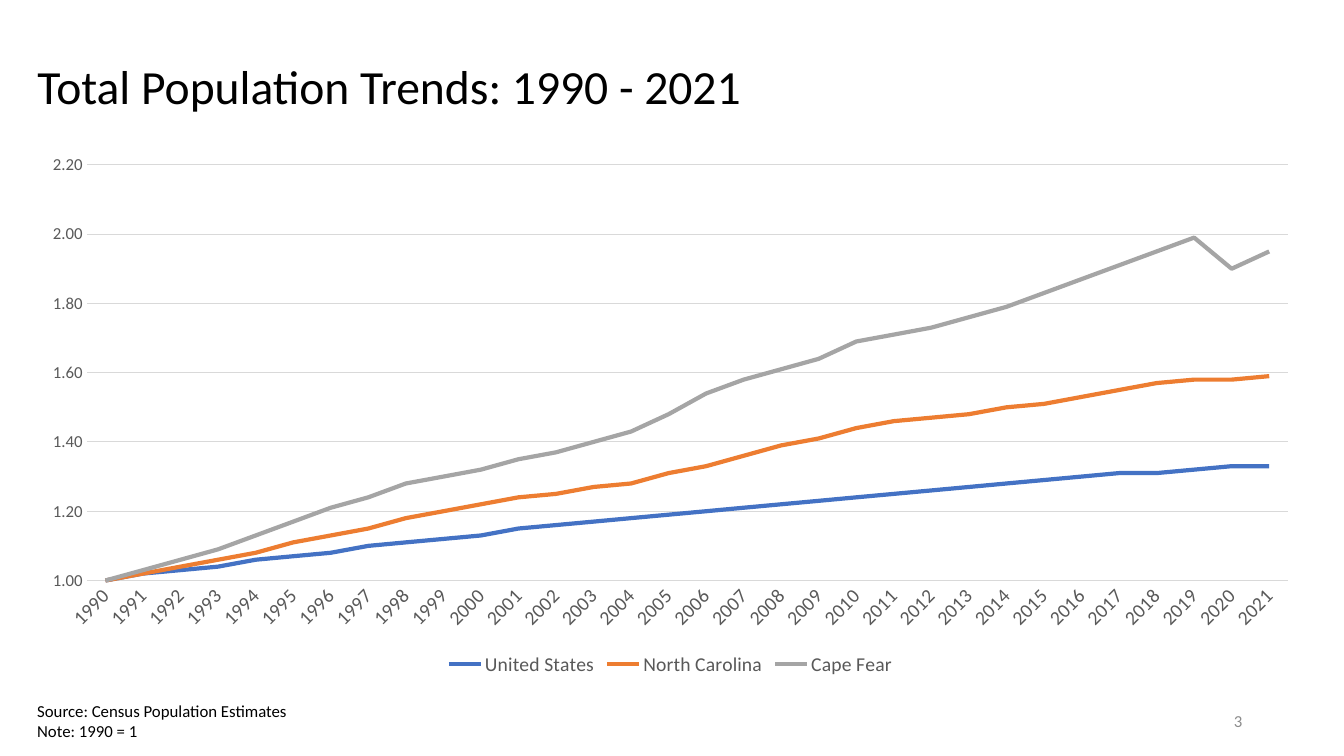
from pptx import Presentation
from pptx import util as u
from pptx.chart import data
from pptx.dml import color
from pptx.enum import chart as ch, text

COLORS = {"black": "000000", "label": "595959", "grid": "D9D9D9", "number": "8C8C8C",
          "blue": "4472C4", "orange": "ED7D31", "gray": "A5A5A5"}

TRENDS = [
    ("United States", "blue",
     [1, 1.02, 1.03, 1.04, 1.06, 1.07, 1.08, 1.1, 1.11, 1.12, 1.13, 1.15, 1.16, 1.17, 1.18, 1.19,
      1.2, 1.21, 1.22, 1.23, 1.24, 1.25, 1.26, 1.27, 1.28, 1.29, 1.3, 1.31, 1.31, 1.32, 1.33, 1.33]),
    ("North Carolina", "orange",
     [1, 1.02, 1.04, 1.06, 1.08, 1.11, 1.13, 1.15, 1.18, 1.2, 1.22, 1.24, 1.25, 1.27, 1.28, 1.31,
      1.33, 1.36, 1.39, 1.41, 1.44, 1.46, 1.47, 1.48, 1.5, 1.51, 1.53, 1.55, 1.57, 1.58, 1.58, 1.59]),
    ("Cape Fear", "gray",
     [1, 1.03, 1.06, 1.09, 1.13, 1.17, 1.21, 1.24, 1.28, 1.3, 1.32, 1.35, 1.37, 1.4, 1.43, 1.48,
      1.54, 1.58, 1.61, 1.64, 1.69, 1.71, 1.73, 1.76, 1.79, 1.83, 1.87, 1.91, 1.95, 1.99, 1.9, 1.95]),
]


class TrendSlide:
    """Holds the font and the current slide, and adds its elements."""

    def __init__(self, deck, face="Calibri"):
        self.face = face
        self.slide = deck.slides.add_slide(deck.slide_layouts[5])

    def apply(self, target, **values):
        for name, value in values.items():
            setattr(target, name, value)

    def font(self, font, size, shade):
        self.apply(font, name=self.face, size=u.Pt(size))
        font.color.rgb = color.RGBColor.from_string(COLORS[shade])

    def line(self, line, width, shade):
        line.width = u.Pt(width)
        line.color.rgb = color.RGBColor.from_string(COLORS[shade])

    def fill_text(self, frame, lines, size, shade, align, **values):
        self.apply(frame, **values)
        frame.text = "\n".join(lines)
        for paragraph in frame.paragraphs:
            paragraph.alignment = align
            self.font(paragraph.font, size, shade)

    def title(self, words, box):
        heading = self.slide.shapes.title
        self.apply(heading, **dict(zip(("left", "top", "width", "height"), map(u.Inches, box))))
        self.fill_text(heading.text_frame, [words], 34, "black", text.PP_ALIGN.LEFT,
                       vertical_anchor=text.MSO_ANCHOR.MIDDLE, auto_size=text.MSO_AUTO_SIZE.NONE)
        heading.text_frame.paragraphs[0].line_spacing = 0.9

    def label(self, lines, box, shade="black", align=text.PP_ALIGN.LEFT, **values):
        frame = self.slide.shapes.add_textbox(*map(u.Inches, box)).text_frame
        self.fill_text(frame, lines, 12, shade, align, **values)

    def line_chart(self, years, trends, box):
        source = data.CategoryChartData(number_format="0.00")
        source.categories = years
        for name, _, values in trends:
            source.add_series(name, values)
        chart = self.slide.shapes.add_chart(
            ch.XL_CHART_TYPE.LINE, *map(u.Inches, box), source).chart
        self.apply(chart, has_title=False, has_legend=True)
        self.font(chart.font, 10, "black")
        self.apply(chart.legend, position=ch.XL_LEGEND_POSITION.BOTTOM, include_in_layout=False)
        self.font(chart.legend.font, 14, "label")
        chart.plots[0].vary_by_categories = False
        for series, (_, shade, _) in zip(chart.plots[0].series, trends):
            series.smooth = False
            series.marker.style = ch.XL_MARKER_STYLE.NONE
            self.line(series.format.line, 3, shade)

        year_axis, index_axis = chart.category_axis, chart.value_axis
        for axis, size in ((year_axis, 14), (index_axis, 12)):
            self.apply(axis, major_tick_mark=ch.XL_TICK_MARK.NONE,
                       minor_tick_mark=ch.XL_TICK_MARK.NONE)
            self.font(axis.tick_labels.font, size, "label")
        self.line(year_axis.format.line, 0.75, "grid")
        year_axis._element.txPr.bodyPr.set("rot", "-2700000")
        self.apply(index_axis, minimum_scale=1, maximum_scale=2.2, major_unit=0.2,
                   has_major_gridlines=True)
        self.apply(index_axis.tick_labels, number_format="0.00", number_format_is_linked=False)
        self.line(index_axis.major_gridlines.format.line, 0.75, "grid")
        index_axis.format.line.fill.background()


def main():
    deck = Presentation()
    deck.slide_width, deck.slide_height = u.Inches(13.33), u.Inches(7.5)
    page = TrendSlide(deck)
    page.title("Total Population Trends: 1990 - 2021", (0.27, 0.34, 12.76, 1.09))
    page.line_chart([str(year) for year in range(1990, 2022)], TRENDS, (0.27, 1.43, 12.76, 5.32))
    page.label(["3"], (9.42, 6.95, 3, 0.4), "number", text.PP_ALIGN.RIGHT,
               word_wrap=True, vertical_anchor=text.MSO_ANCHOR.MIDDLE)
    page.label(["Source: Census Population Estimates", "Note: 1990 = 1"], (0.27, 6.9, 2.71, 0.5),
               word_wrap=False, auto_size=text.MSO_AUTO_SIZE.SHAPE_TO_FIT_TEXT)
    deck.save("out.pptx")


if __name__ == "__main__":
    main()
